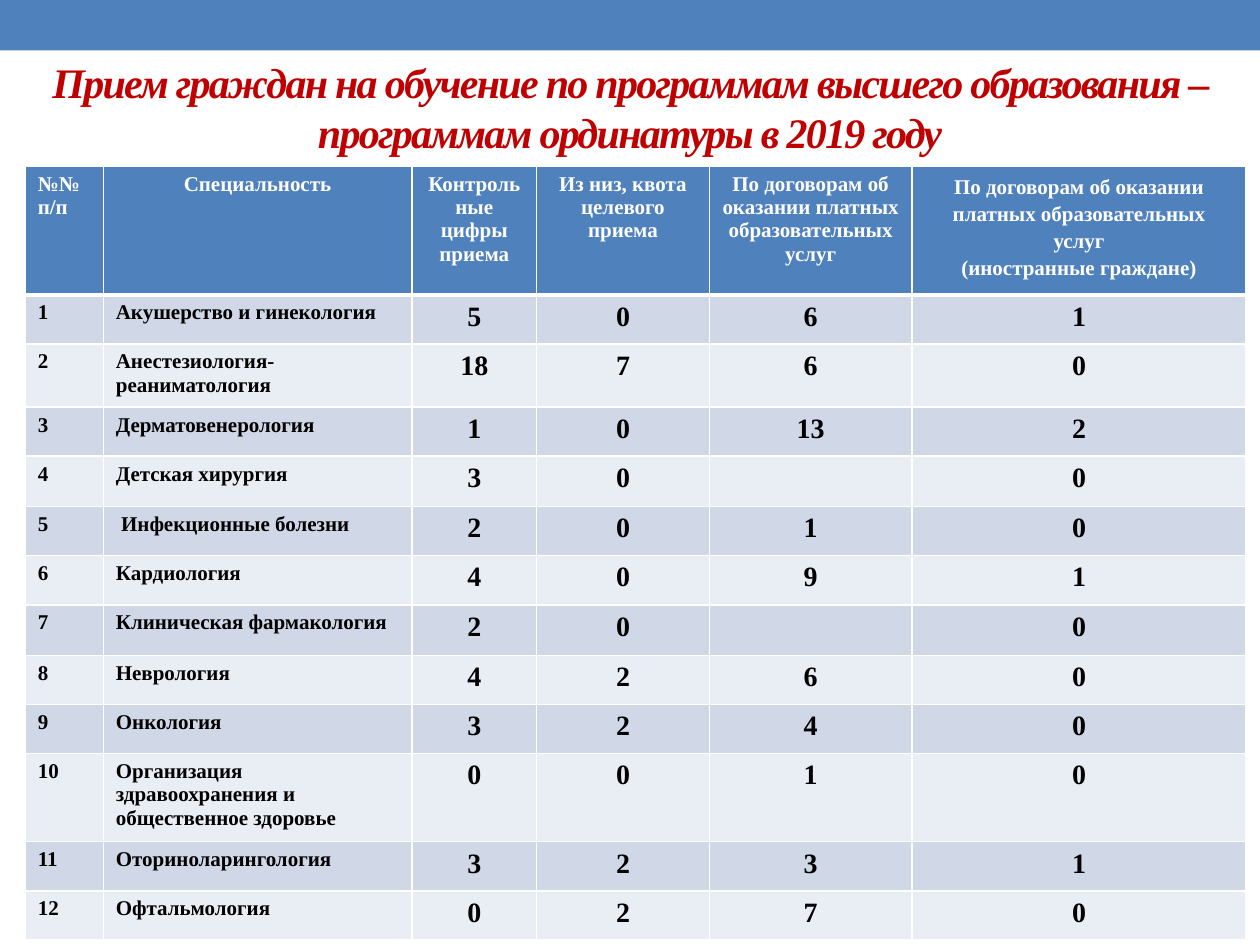
import pptx
import pptx.util
import pptx.dml.color
import pptx.enum.shapes
import pptx.enum.text
import pptx.oxml
import pptx.oxml.ns

Inches = pptx.util.Inches
Pt = pptx.util.Pt
RGB = pptx.dml.color.RGBColor
ALIGN = pptx.enum.text.PP_ALIGN

BLUE = RGB(0x4F, 0x81, 0xBD)
RED = RGB(0xC0, 0x00, 0x00)
WHITE = RGB(0xFF, 0xFF, 0xFF)
BLACK = RGB(0x00, 0x00, 0x00)
BANDS = (RGB(0xD0, 0xD8, 0xE8), RGB(0xE9, 0xED, 0xF4))
FONT = "Times New Roman"

TITLE = ("Прием граждан на обучение по программам высшего образования – "
         "программам ординатуры в 2019 году")
PAID = "По договорам об оказании платных образовательных услуг"
HEADS = [
    ["№№", "п/п"],
    ["Специальность"],
    ["Контрольные цифры приема"],
    ["Из низ, квота целевого приема"],
    [PAID],
    [PAID, "(иностранные граждане)"],
]
# Specialty, planned places, target quota, paid, paid by foreigners
ROWS = [
    ("Акушерство и гинекология", 5, 0, 6, 1),
    ("Анестезиология-реаниматология", 18, 7, 6, 0),
    ("Дерматовенерология", 1, 0, 13, 2),
    ("Детская хирургия", 3, 0, "", 0),
    (" Инфекционные болезни", 2, 0, 1, 0),
    ("Кардиология", 4, 0, 9, 1),
    ("Клиническая фармакология", 2, 0, "", 0),
    ("Неврология", 4, 2, 6, 0),
    ("Онкология", 3, 2, 4, 0),
    ("Организация здравоохранения и общественное здоровье", 0, 0, 1, 0),
    ("Оториноларингология", 3, 2, 3, 1),
    ("Офтальмология", 0, 2, 7, 0),
]
COLS = [0.62, 2.45, 0.99, 1.37, 1.61, 2.65]
HEAD_H, ROW_H = 0.94, 0.39
TALL = {2: 0.48, 10: 0.67}


def add_run(para, text, size, color):
    run = para.add_run()
    run.text = text
    font = run.font
    font.name, font.size, font.bold = FONT, Pt(size), True
    font.color.rgb = color
    return run


def set_edge(cell, side, width):
    line = pptx.oxml.parse_xml(
        f'<a:ln{side} {pptx.oxml.ns.nsdecls("a")} w="{Pt(width)}">'
        f'<a:solidFill><a:srgbClr val="{WHITE}"/></a:solidFill></a:ln{side}>')
    cell._tc.get_or_add_tcPr().append(line)


def fill_cell(cell, lines, size, color, back, align, edges, gap=None):
    # Edges go in before the fill, as the schema orders them
    for side, width in zip("LRTB", edges):
        set_edge(cell, side, width)
    cell.fill.solid()
    cell.fill.fore_color.rgb = back
    frame = cell.text_frame
    for i, text in enumerate(lines):
        para = frame.add_paragraph() if i else frame.paragraphs[0]
        para.alignment = align
        if gap:
            para.line_spacing = gap
        if text:
            add_run(para, text, size, color)


def add_band(slide, left, top, width, height):
    band = slide.shapes.add_shape(
        pptx.enum.shapes.MSO_SHAPE.RECTANGLE, left, top, width, height)
    band.shadow.inherit = False
    band.fill.solid()
    band.fill.fore_color.rgb = BLUE
    band.line.fill.background()


def add_title(slide, left, top, width, height):
    frame = slide.shapes.add_textbox(left, top, width, height).text_frame
    frame.word_wrap = True
    frame.vertical_anchor = pptx.enum.text.MSO_ANCHOR.MIDDLE
    para = frame.paragraphs[0]
    para.alignment = ALIGN.CENTER
    run = add_run(para, TITLE, 24, RED)
    run.font.italic = True
    run.font._element.set("spc", "-100")


def add_grid(slide, left, top, width, height):
    table = slide.shapes.add_table(
        len(ROWS) + 1, len(COLS), left, top, width, height).table
    for col, size in zip(table.columns, COLS):
        col.width = Inches(size)
    for i, row in enumerate(table.rows):
        row.height = Inches(TALL.get(i, ROW_H) if i else HEAD_H)

    # Heading row
    last = len(COLS) - 1
    for j, lines in enumerate(HEADS):
        fill_cell(table.cell(0, j), lines, 12, WHITE, BLUE,
                  ALIGN.CENTER if j else ALIGN.LEFT, (1, 1, 1, 3),
                  1.15 if j == last else None)

    # Numbered rows in two alternating colours
    for i, row in enumerate(ROWS, 1):
        edges = (1, 1, 3 if i == 1 else 1, 1)
        for j, value in enumerate((i, *row)):
            size, align = (12, ALIGN.LEFT) if j < 2 else (16, ALIGN.CENTER)
            fill_cell(table.cell(i, j), [str(value)], size, BLACK,
                      BANDS[(i - 1) % 2], align, edges)


def main():
    deck = pptx.Presentation()
    deck.slide_width, deck.slide_height = Inches(10), Inches(7.5)
    slide = deck.slides.add_slide(deck.slide_layouts[6])
    add_band(slide, 0, 0, deck.slide_width, Inches(0.4))
    add_title(slide, 0, Inches(0.39), deck.slide_width, Inches(0.91))
    add_grid(slide, Inches(0.2), Inches(1.32), Inches(9.69), Inches(6.09))
    deck.save("out.pptx")


if __name__ == "__main__":
    main()
